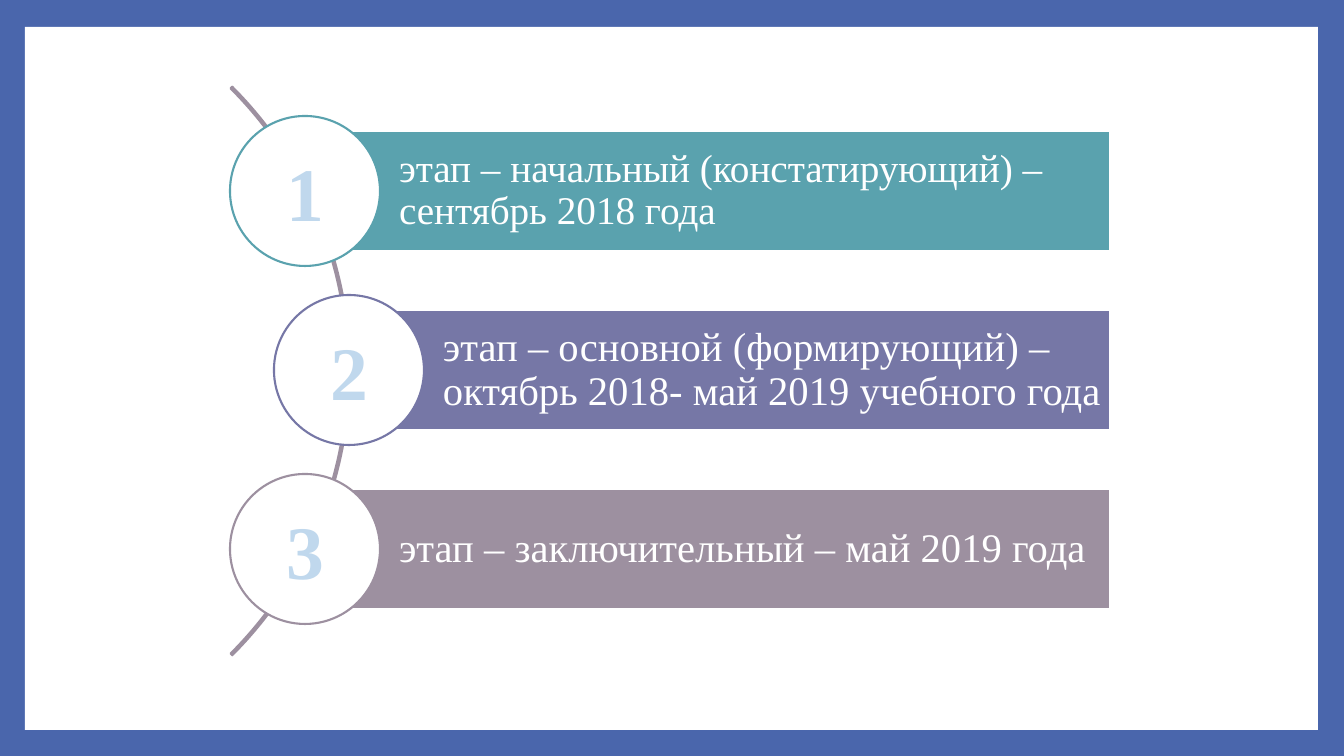
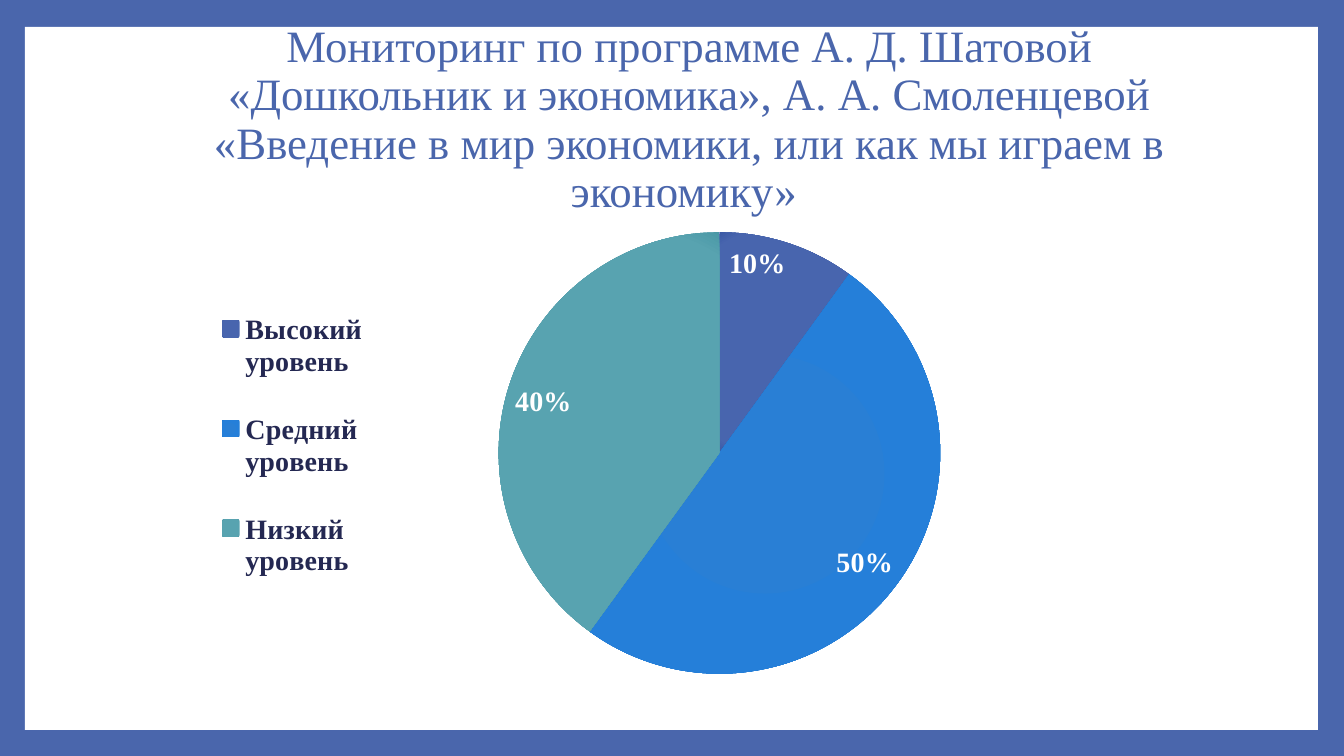
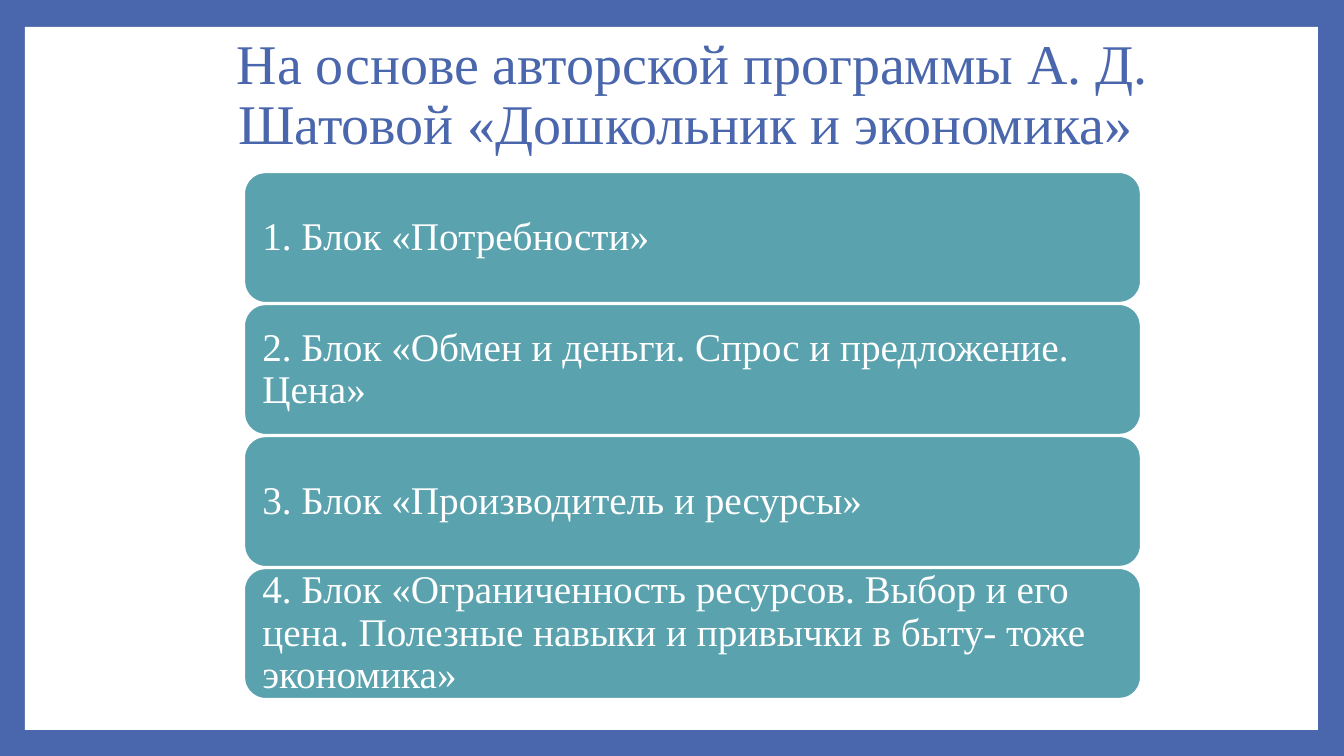
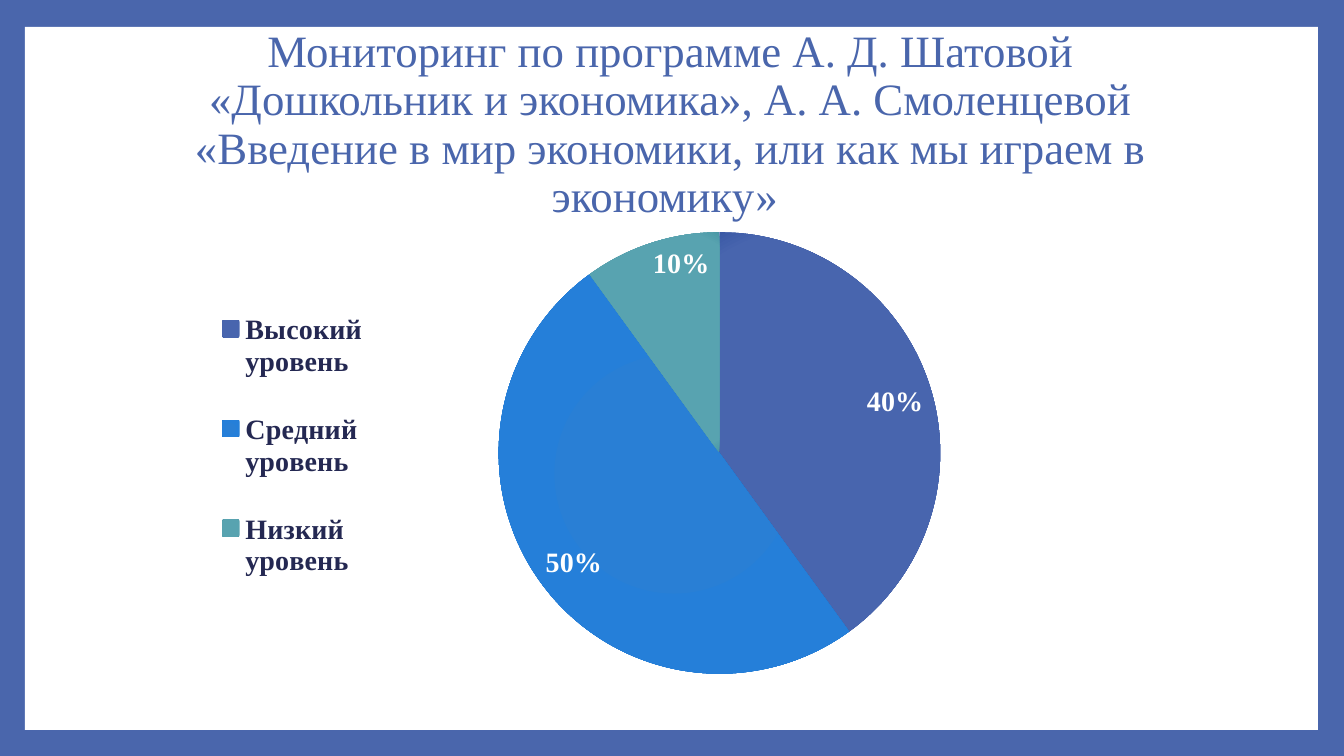
from pptx import Presentation
from pptx.chart.data import CategoryChartData
from pptx.dml.color import RGBColor
from pptx.enum.chart import XL_CHART_TYPE as ChartType
from pptx.enum.chart import XL_LABEL_POSITION as LabelPosition
from pptx.enum.chart import XL_LEGEND_POSITION as LegendPosition
from pptx.enum.shapes import MSO_SHAPE as Preset
from pptx.enum.text import MSO_ANCHOR as Anchor
from pptx.enum.text import MSO_AUTO_SIZE as AutoSize
from pptx.enum.text import PP_ALIGN as Align
from pptx.oxml import parse_xml
from pptx.oxml.ns import nsdecls
from pptx.util import Emu, Pt

# Content
COLORS = {
    "blue": "4A66AC", "white": "FFFFFF", "teal": "5AA2AE", "violet": "7677A6",
    "mauve": "9D90A0", "digit": "C0D8ED", "digit_edge": "629DD1", "navy": "242852",
}
FONT = "Times New Roman"

STAGES = [  # text, size, colour, circle left
    ("этап – начальный (констатирующий) – сентябрь 2018 года", 28, "teal", 230),
    ("этап – основной (формирующий) – октябрь 2018- май 2019 учебного года", 29, "violet", 274),
    ("этап – заключительный – май 2019 года", 29, "mauve", 230),
]
MONITORING = ("Мониторинг по программе А. Д. Шатовой «Дошкольник и экономика», "
              "А. А. Смоленцевой «Введение в мир экономики, или как мы играем в экономику» ")
LEVELS = ["Высокий уровень", "Средний уровень", "Низкий уровень"]
LEVEL_GRADIENTS = [  # colours at 0, 90 and 100 %
    ("4A66AC", "4865AE", "3A59A5"),
    ("297FD5", "257FD9", "1673D1"),
    ("5AA2AE", "58A3B0", "4A98A6"),
]
BEFORE, AFTER = (10, 50, 40), (40, 50, 10)
PROGRAM = "На основе авторской программы А. Д. Шатовой «Дошкольник и экономика» "
BLOCKS = [
    "1. Блок «Потребности»",
    "2. Блок «Обмен и деньги. Спрос и предложение. Цена»",
    "3. Блок «Производитель и ресурсы»",
    "4. Блок «Ограниченность ресурсов. Выбор и его цена. "
    "Полезные навыки и привычки в быту- тоже экономика»",
]

# Geometry in px
WIDTH, HEIGHT = 1344, 756
SCALE = 12192000 / WIDTH
FRAME = (25, 27, 1293, 703)
ARC = (-454, -31, 804, 804)
BAR_TOP, BAR_HEIGHT, BAR_RIGHT, BAR_STEP = 131, 120, 1110, 179
CIRCLE = 150
BLOCK_LEFT, BLOCK_TOP, BLOCK_WIDTH, BLOCK_HEIGHT, BLOCK_STEP = 244, 172, 897, 131, 132
CHART = (145, 223, 982, 460)
PLOT_LAYOUT = (0.36, 0.02, 0.45, 0.96)
LEGEND_LAYOUT = (0.06, 0.12, 0.18, 0.73)


def px(value):
    return Emu(round(value * SCALE))


def rgb(name):
    return RGBColor.from_string(COLORS[name])


# Shared helpers
def style_font(font, size, color, bold=False):
    font.name, font.size, font.bold = FONT, Pt(size), bold
    font.color.rgb = rgb(color)


def write(box, text, size=28, color="white", bold=False, align=Align.LEFT,
          spacing=0.9, insets=None):
    frame = box.text_frame
    frame.word_wrap = True
    frame.auto_size = AutoSize.NONE
    frame.vertical_anchor = Anchor.MIDDLE
    if insets:
        (frame.margin_left, frame.margin_top,
         frame.margin_right, frame.margin_bottom) = map(px, insets)
    para = frame.paragraphs[0]
    para.alignment, para.line_spacing = align, spacing
    span = para.add_run()
    span.text = text
    style_font(span.font, size, color, bold)
    return span


def add_shape(page, preset, box, fill=None, line=None):
    shape = page.shapes.add_shape(preset, *map(px, box))
    shape.shadow.inherit = False
    if fill:
        shape.fill.solid()
        shape.fill.fore_color.rgb = rgb(fill)
    else:
        shape.fill.background()
    if line:
        shape.line.color.rgb = rgb(line)
        shape.line.width = Pt(1.5)
    else:
        shape.line.fill.background()
    return shape


def add_title(page, text, box, size):
    title = page.shapes.title
    title.left, title.top, title.width, title.height = map(px, box)
    write(title, text, size=size, color="blue", align=Align.CENTER)


def style_master(deck, page):
    """Blue background with a white panel, shared by every slide."""
    master = deck.slide_master
    master.background.fill.solid()
    master.background.fill.fore_color.rgb = rgb("blue")
    panel = add_shape(page, Preset.RECTANGLE, FRAME, fill="white")
    panel.element.nvSpPr.cNvPr.set("id", "100")
    master.shapes.element.insert(2, panel.element)


# Slide parts
def add_stages(page):
    arc = add_shape(page, Preset.BLOCK_ARC, ARC, line="mauve")
    for index, value in enumerate((189, 27, 0.003)):
        arc.adjustments[index] = value
    for index, (text, size, color, left) in enumerate(STAGES):
        top = BAR_TOP + index * BAR_STEP
        bar_left = left + CIRCLE // 2
        bar = add_shape(page, Preset.RECTANGLE,
                        (bar_left, top, BAR_RIGHT - bar_left, BAR_HEIGHT), color, "white")
        write(bar, text, size=size, insets=(94, 8, 8, 8))
        circle_top = top + (BAR_HEIGHT - CIRCLE) // 2
        circle = add_shape(page, Preset.OVAL, (left, circle_top, CIRCLE, CIRCLE), "white", color)
        digit = write(circle, str(index + 1), size=54, color="digit", bold=True,
                      align=Align.CENTER, spacing=1, insets=(0, 0, 0, 0))
        digit.font.element.insert(0, parse_xml(
            f'<a:ln {nsdecls("a")} w="22225"><a:solidFill>'
            f'<a:srgbClr val="{COLORS["digit_edge"]}"/></a:solidFill></a:ln>'
        )) if hasattr(digit.font, "element") else outline(circle)


def outline(box):
    for props in box.element.xpath(".//a:rPr"):
        props.insert(0, parse_xml(
            f'<a:ln {nsdecls("a")} w="22225"><a:solidFill>'
            f'<a:srgbClr val="{COLORS["digit_edge"]}"/></a:solidFill></a:ln>'))


def add_blocks(page):
    for index, text in enumerate(BLOCKS):
        block = add_shape(page, Preset.ROUNDED_RECTANGLE,
                          (BLOCK_LEFT, BLOCK_TOP + index * BLOCK_STEP, BLOCK_WIDTH, BLOCK_HEIGHT),
                          "teal", "white")
        write(block, text, insets=(12, 12, 12, 12))


def set_layout(parent, position, layout, inner=False):
    for old in parent.xpath("./c:layout"):
        parent.remove(old)
    x, y, width, height = layout
    target = '<c:layoutTarget val="inner"/>' if inner else ""
    parent.insert(position, parse_xml(
        f'<c:layout {nsdecls("c")}><c:manualLayout>{target}'
        f'<c:xMode val="edge"/><c:yMode val="edge"/><c:x val="{x}"/><c:y val="{y}"/>'
        f'<c:w val="{width}"/><c:h val="{height}"/></c:manualLayout></c:layout>'))


def radial_fill(colors):
    stops = "".join(f'<a:gs pos="{pos}"><a:srgbClr val="{color}"/></a:gs>'
                    for pos, color in zip((0, 90000, 100000), colors))
    return parse_xml(
        f'<a:gradFill {nsdecls("a")} rotWithShape="1"><a:gsLst>{stops}</a:gsLst>'
        '<a:path path="circle"><a:fillToRect l="100000" t="100000" r="100000" b="100000"/>'
        '</a:path></a:gradFill>')


def add_pie(page, values):
    data = CategoryChartData()
    data.categories = LEVELS
    data.add_series("Series 1", values)
    chart = page.shapes.add_chart(ChartType.PIE, *map(px, CHART), data).chart
    chart.has_title = False
    chart.font.name, chart.font.size = "Calibri", Pt(10)

    # Legend and plot position
    chart.has_legend = True
    chart.legend.position = LegendPosition.BOTTOM
    chart.legend.include_in_layout = False
    style_font(chart.legend.font, 20, "navy", bold=True)
    set_layout(chart.element.xpath(".//c:legend")[0], 1, LEGEND_LAYOUT)
    set_layout(chart.element.xpath(".//c:plotArea")[0], 0, PLOT_LAYOUT, inner=True)

    # Slices and labels
    pie = chart.plots[0]
    pie.vary_by_categories = True
    for index in range(len(LEVELS)):
        pie.series[0].points[index].format.fill.solid()
    for props, colors in zip(chart.element.xpath(".//c:dPt/c:spPr"), LEVEL_GRADIENTS):
        props.replace(props.xpath("./a:solidFill")[0], radial_fill(colors))
    pie.has_data_labels = True
    labels = pie.data_labels
    labels.show_percentage, labels.show_value = True, False
    labels.number_format, labels.number_format_is_linked = "0%", False
    labels.position = LabelPosition.INSIDE_END
    style_font(labels.font, 20, "white", bold=True)


def main():
    deck = Presentation()
    deck.slide_width, deck.slide_height = px(WIDTH), px(HEIGHT)
    title_only, blank = deck.slide_layouts[5], deck.slide_layouts[6]

    page = deck.slides.add_slide(blank)
    style_master(deck, page)
    add_stages(page)

    page = deck.slides.add_slide(title_only)
    add_title(page, MONITORING, (145, 46, 1089, 149), 32)
    add_pie(page, BEFORE)

    page = deck.slides.add_slide(title_only)
    add_title(page, PROGRAM, (148, 22, 1089, 149), 40)
    add_blocks(page)

    page = deck.slides.add_slide(title_only)
    add_title(page, MONITORING, (126, 71, 1089, 109), 32)
    add_pie(page, AFTER)

    deck.save("out.pptx")


if __name__ == "__main__":
    main()
